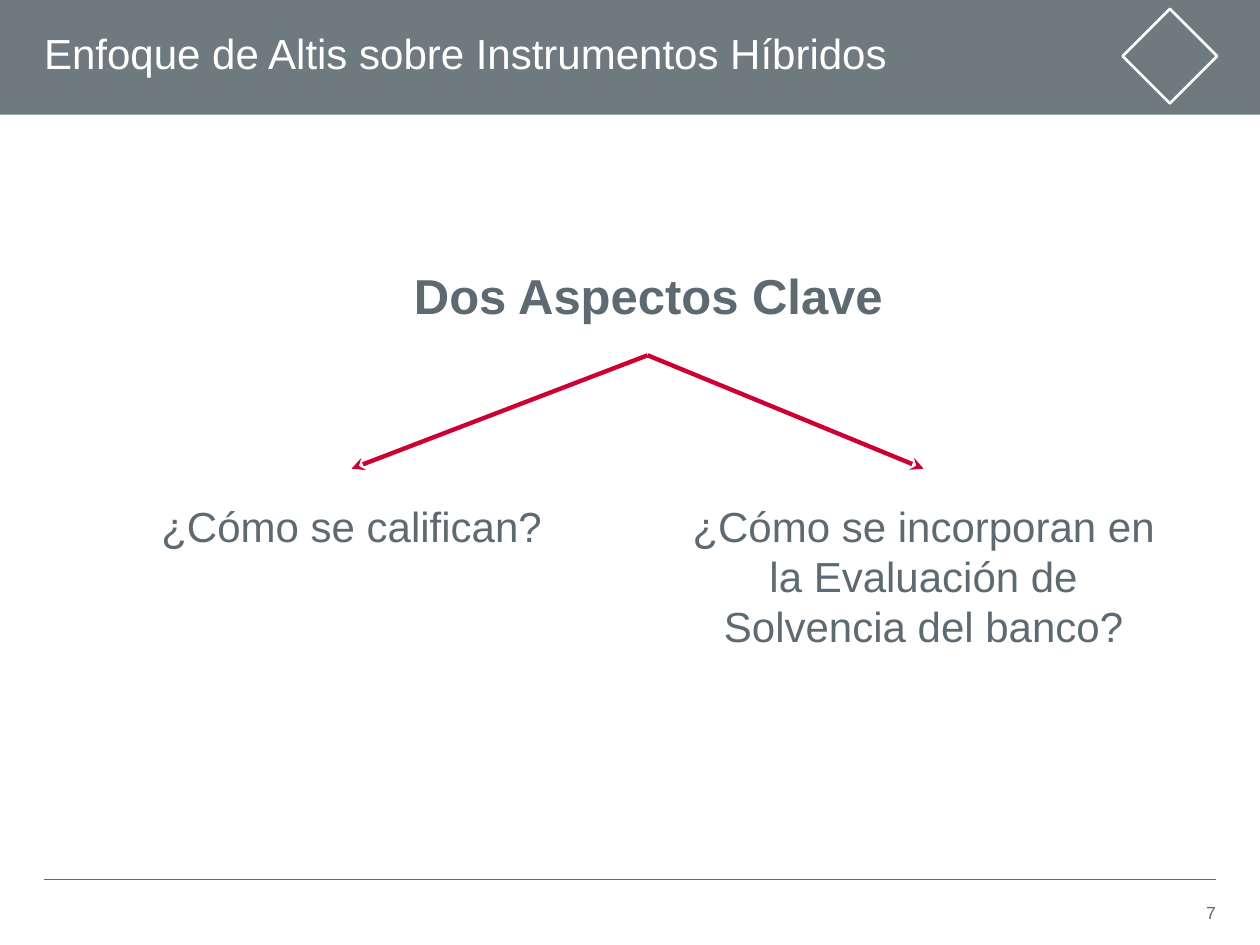
import lxml.etree
import pptx
import pptx.dml.color
import pptx.enum.shapes
import pptx.enum.text
import pptx.oxml.ns
import pptx.util

Inches = pptx.util.Inches
RGB = pptx.dml.color.RGBColor.from_string
ALIGN = pptx.enum.text.PP_ALIGN
ANCHOR = pptx.enum.text.MSO_ANCHOR
SHAPE = pptx.enum.shapes.MSO_SHAPE
qn = pptx.oxml.ns.qn

THEME = {
    "font": "Arial",
    "band": RGB("6F7A80"), "white": RGB("FFFFFF"),
    "text": RGB("5E6A71"), "accent": RGB("CC0033"),
    "title": 24, "heading": 28, "body": 24, "number": 10,
}


def add_text(s, text, box, size, color, align, anchor=ANCHOR.TOP, bold=False, inset=True):
    tf = s.shapes.add_textbox(*map(Inches, box)).text_frame
    frame = {"word_wrap": True, "vertical_anchor": anchor}
    if not inset:
        for side in ("left", "top", "right", "bottom"):
            frame[f"margin_{side}"] = 0
    for name, value in frame.items():
        setattr(tf, name, value)
    p = tf.paragraphs[0]
    p.alignment = align
    r = p.add_run()
    r.text = text
    font = {"name": THEME["font"], "size": pptx.util.Pt(THEME[size]), "bold": bold}
    for name, value in font.items():
        setattr(r.font, name, value)
    r.font.color.rgb = THEME[color]
    return p


def add_line(s, start, end, color, width, arrow=False):
    line = s.shapes.add_connector(
        pptx.enum.shapes.MSO_CONNECTOR.STRAIGHT, *map(Inches, start + end))
    line.line.color.rgb = THEME[color]
    line.line.width = pptx.util.Pt(width)
    if arrow:
        ln = line.line._get_or_add_ln()
        lxml.etree.SubElement(ln, qn("a:tailEnd"), type="stealth")
    lxml.etree.SubElement(line._element.spPr, qn("a:effectLst"))


prs = pptx.Presentation()
prs.slide_width, prs.slide_height = Inches(10), Inches(7.5)
s = prs.slides.add_slide(prs.slide_layouts[6])

# Header band with a plain diamond emblem
sp = s.shapes.add_shape(SHAPE.RECTANGLE, 0, 0, prs.slide_width, Inches(0.91))
sp.shadow.inherit = False
sp.fill.solid()
sp.fill.fore_color.rgb = THEME["band"]
sp.line.fill.background()

sp = s.shapes.add_shape(SHAPE.DIAMOND, *map(Inches, (8.91, 0.07, 0.75, 0.75)))
sp.shadow.inherit = False
sp.fill.background()
sp.line.color.rgb = THEME["white"]
sp.line.width = pptx.util.Pt(1.5)

p = add_text(s, "Enfoque de Altis sobre Instrumentos Híbridos", (0.35, 0.13, 8.55, 0.63),
             "title", "white", ALIGN.LEFT, ANCHOR.MIDDLE, inset=False)
p.line_spacing = 0.9

# Footer rule and page number
add_line(s, (0.35, 6.98), (9.65, 6.98), "text", 0.25)
add_text(s, "7", (8.51, 7.11, 1.14, 0.27), "number", "text",
         ALIGN.RIGHT, ANCHOR.MIDDLE, inset=False)

# Heading
add_text(s, "Dos Aspectos Clave", (0.59, 2.06, 9.11, 0.9), "heading", "text",
         ALIGN.CENTER, bold=True)

# Two questions, each reached by an arrow from the heading
questions = [
    ("¿Cómo se califican?", 2.79),
    ("¿Cómo se incorporan en la Evaluación de Solvencia del banco?", 7.33),
]
for question, center in questions:
    add_text(s, question, (center - 2.04, 3.92, 4.08, 0.9), "body", "text", ALIGN.CENTER)
    add_line(s, (5.14, 2.82), (center, 3.72), "accent", 2.5, arrow=True)

prs.save("out.pptx")
